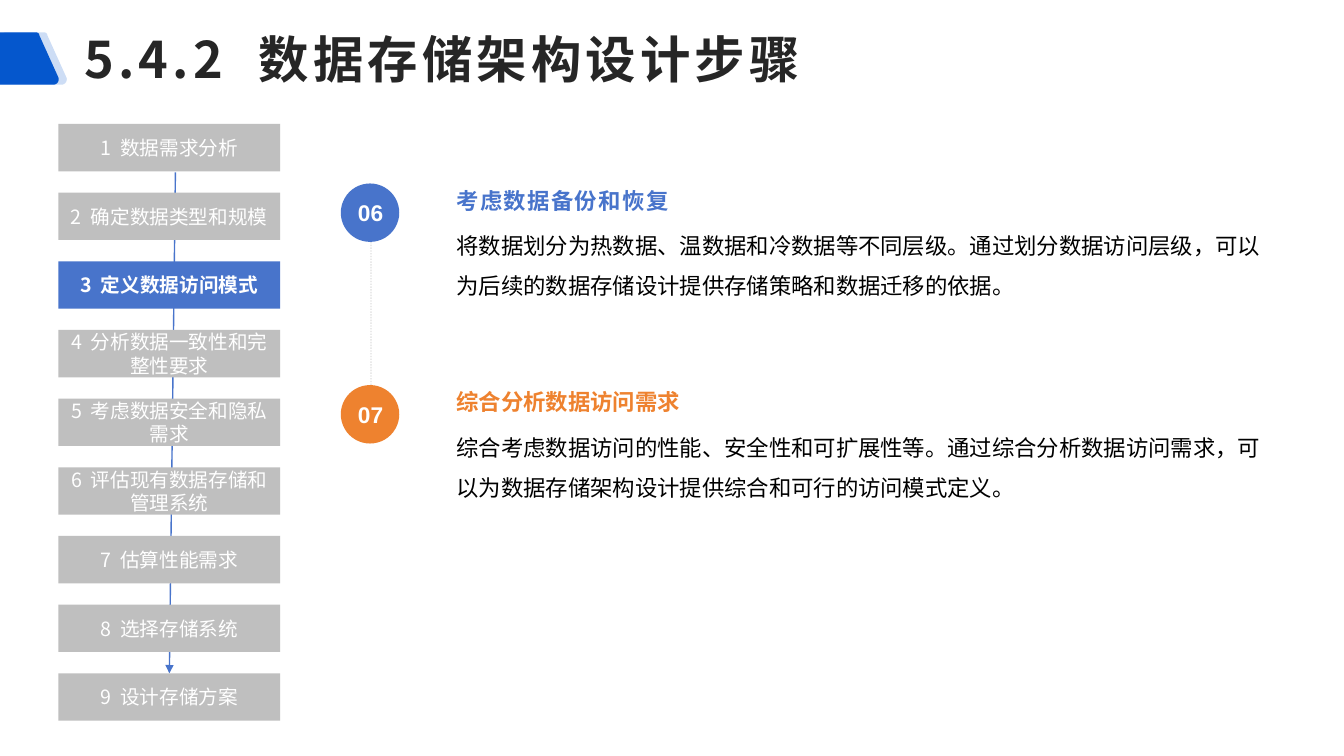
from dataclasses import dataclass

import pptx
import pptx.dml.color
import pptx.enum.dml
import pptx.enum.shapes
import pptx.enum.text
import pptx.oxml
import pptx.oxml.ns
import pptx.util

Inches = pptx.util.Inches
Pt = pptx.util.Pt
ShapeKind = pptx.enum.shapes.MSO_SHAPE
Anchor = pptx.enum.text.MSO_ANCHOR
Align = pptx.enum.text.PP_ALIGN
qn = pptx.oxml.ns.qn

SANS, SERIF, LATIN = "Noto Sans CJK SC", "Times New Roman", "Arial"
BLUE, ORANGE, GRAY, WHITE = "4874CB", "EE822F", "BFBFBF", "FFFFFF"


@dataclass
class Span:
    text: str
    font: str = ""
    spacing: float = 0


@dataclass
class Point:
    number: str
    top: float
    color: str
    heading: Span
    body: str


STEPS = ["数据需求分析", "确定数据类型和规模", "定义数据访问模式", "分析数据一致性和完整性要求",
         "考虑数据安全和隐私需求", "评估现有数据存储和管理系统", "估算性能需求",
         "选择存储系统", "设计存储方案"]
CURRENT_STEP = 3
STEP_LEFT, STEP_TOP, STEP_PITCH = 0.58, 1.23, 5.45 / 8

POINTS = [
    Point("06", 1.82, BLUE, Span("考虑数据备份和恢复", SANS, 1),
          "将数据划分为热数据、温数据和冷数据等不同层级。通过划分数据访问层级，"
          "可以为后续的数据存储设计提供存储策略和数据迁移的依据。"),
    Point("07", 3.82, ORANGE, Span("综合分析数据访问需求", LATIN),
          "综合考虑数据访问的性能、安全性和可扩展性等。通过综合分析数据访问需求，"
          "可以为数据存储架构设计提供综合和可行的访问模式定义。"),
]


def rgb(value: str):
    return pptx.dml.color.RGBColor.from_string(value)


def set_alpha(color_parent, percent: int) -> None:
    color = color_parent.find(".//" + qn("a:srgbClr"))
    alpha = pptx.oxml.parse_xml(
        f'<a:alpha {pptx.oxml.ns.nsdecls("a")} val="{percent * 1000}"/>')
    color.append(alpha)


def paint(shape, color: str) -> None:
    shape.shadow.inherit = False
    shape.fill.solid()
    shape.fill.fore_color.rgb = rgb(color)
    shape.line.fill.background()


def write(shape, spans: list[Span], size: float, color: str, bold: bool = False,
          align=Align.LEFT, anchor=Anchor.MIDDLE, bottom: float = 0.05):
    frame = shape.text_frame
    frame.word_wrap = True
    frame.vertical_anchor = anchor
    frame.margin_bottom = Inches(bottom)
    para = frame.paragraphs[0]
    para.alignment = align
    para.font.size = Pt(size)
    para.font.bold = bold
    para.font.color.rgb = rgb(color)
    if len({span.font for span in spans}) == 1:
        para.font.name = spans[0].font
    east_asian = para.font._element.makeelement(qn("a:ea"), {"typeface": SANS})
    para.font._element.append(east_asian)
    for span in spans:
        run = para.add_run()
        run.text = span.text
        if para.font.name is None:
            run.font.name = span.font
        if span.spacing:
            run.font._element.set("spc", str(round(span.spacing * 100)))
    return para


def add_text(page, left: float, top: float, width: float, height: float, *args, **options):
    box = page.shapes.add_textbox(Inches(left), Inches(top), Inches(width), Inches(height))
    return write(box, *args, **options)


def add_line(page, start: tuple[float, float], end: tuple[float, float], color: str):
    line = page.shapes.add_connector(
        pptx.enum.shapes.MSO_CONNECTOR.STRAIGHT, *map(Inches, start + end))
    line.line.color.rgb = rgb(color)
    line.line.width = Pt(1)
    properties = line._element.spPr
    properties.append(properties.makeelement(qn("a:effectLst"), {}))
    return line


def curve(*controls: tuple[float, float], pieces: int = 8) -> list[tuple[float, float]]:
    """Points along a cubic curve through its four controls."""
    result = []
    for index in range(pieces + 1):
        t = index / pieces
        weights = ((1 - t) ** 3, 3 * t * (1 - t) ** 2, 3 * t * t * (1 - t), t ** 3)
        result.append(tuple(sum(w * c[axis] for w, c in zip(weights, controls))
                            for axis in (0, 1)))
    return result


def add_title_mark(page, left: float, alpha: int) -> None:
    corners = [
        curve((0.19, 0.35), (0.2, 0.33), (0.21, 0.32), (0.23, 0.32)),
        curve((0.6, 0.32), (0.62, 0.32), (0.64, 0.33), (0.64, 0.35)),
        curve((0.83, 0.77), (0.84, 0.8), (0.82, 0.84), (0.78, 0.84)),
        curve((0.05, 0.84), (0.02, 0.84), (-0.01, 0.8), (0.01, 0.77)),
    ]
    outline = [(Inches(left + x), Inches(y)) for corner in corners for x, y in corner]
    builder = page.shapes.build_freeform(*outline[0])
    builder.add_line_segments(outline[1:], close=True)
    mark = builder.convert_to_shape()
    paint(mark, "0557CD")
    set_alpha(mark._element.spPr, alpha)


def add_point(page, point: Point) -> None:
    circle = page.shapes.add_shape(ShapeKind.OVAL, Inches(3.38), Inches(point.top),
                                   Inches(0.58), Inches(0.58))
    paint(circle, point.color)
    add_text(page, 3.38, point.top + 0.09, 0.59, 0.4, [Span(point.number, LATIN)],
             16.2, WHITE, bold=True, align=Align.CENTER)
    add_text(page, 4.43, point.top - 0.17, 7.7, 0.47, [point.heading],
             16, point.color, bold=True, anchor=Anchor.BOTTOM, bottom=0)
    body = add_text(page, 4.43, point.top + 0.3, 8.28, 0.95, [Span(point.body, LATIN)],
                    16, "000000", anchor=Anchor.TOP)
    body.line_spacing = 1.5
    body.space_after = Pt(10)


def add_step(page, number: int, label: str):
    step = page.shapes.add_shape(
        ShapeKind.RECTANGLE, Inches(STEP_LEFT),
        Inches(STEP_TOP + (number - 1) * STEP_PITCH), Inches(2.2), Inches(0.47))
    current = number == CURRENT_STEP
    paint(step, BLUE if current else GRAY)
    write(step, [Span(f"{number} ", SANS, 1.6), Span(label, SERIF)], 14, WHITE,
          bold=current, align=Align.CENTER)
    return step


def main() -> None:
    deck = pptx.Presentation()
    deck.slide_width, deck.slide_height = Inches(13.33), Inches(7.5)
    page = deck.slides.add_slide(deck.slide_layouts[6])

    # Title with its slanted mark
    add_title_mark(page, -0.17, 20)
    add_title_mark(page, -0.25, 100)
    add_text(page, 0.74, 0.08, 12.59, 1,
             [Span("5.4.2", SANS, 3), Span(" ", SANS, 14), Span("数据存储架构设计步骤", SANS, 3)],
             36, "262626", bold=True)

    # Numbered points joined by a dotted line
    dotted = add_line(page, (3.68, 2.4), (3.68, 3.92), GRAY)
    dotted.line.dash_style = pptx.enum.dml.MSO_LINE.ROUND_DOT
    set_alpha(dotted.line._ln, 50)
    for point in POINTS:
        add_point(page, point)

    # Step list with the arrow running behind it
    arrow = add_line(page, (1.74, 1.71), (1.68, 6.68), BLUE)
    arrow_line = arrow.line._ln
    arrow_line.append(arrow_line.makeelement(qn("a:tailEnd"), {"type": "triangle"}))
    steps = [add_step(page, number, label) for number, label in enumerate(STEPS, 1)]
    arrow.end_connect(steps[-1], 0)

    deck.save("out.pptx")


if __name__ == "__main__":
    main()
